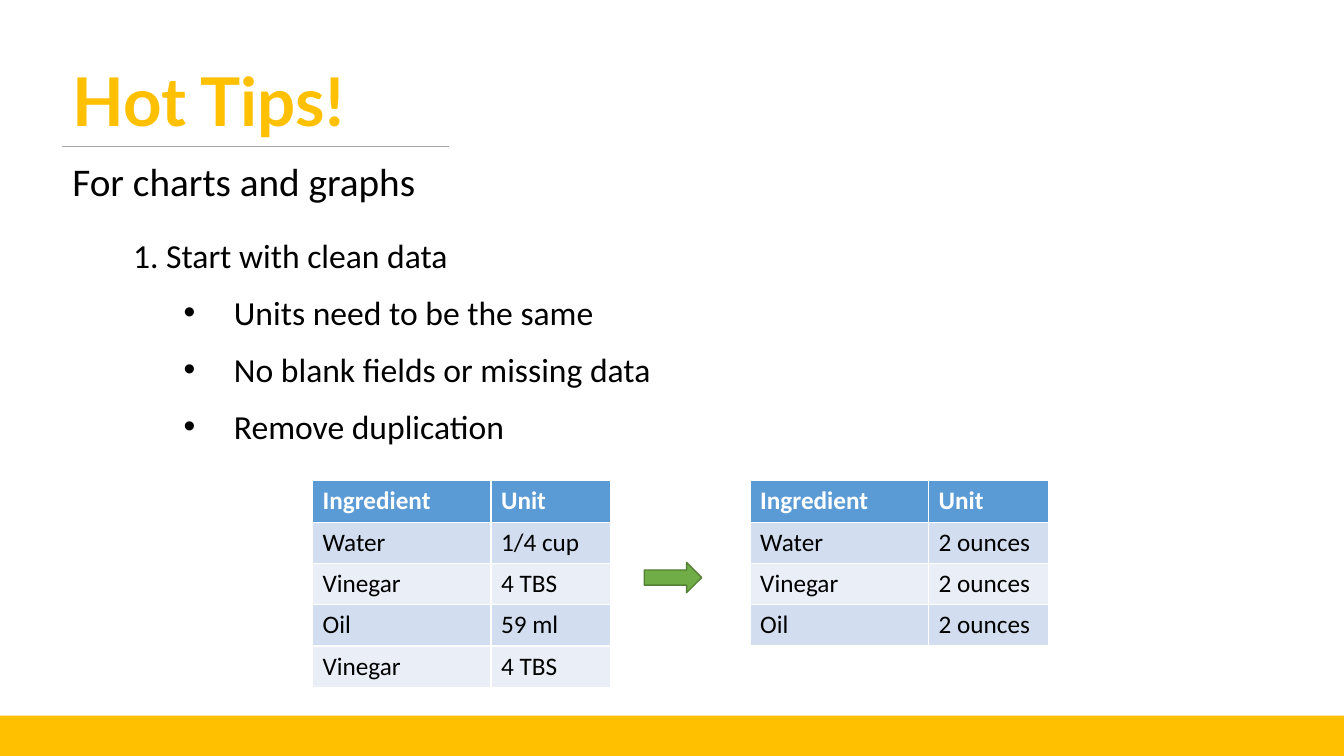
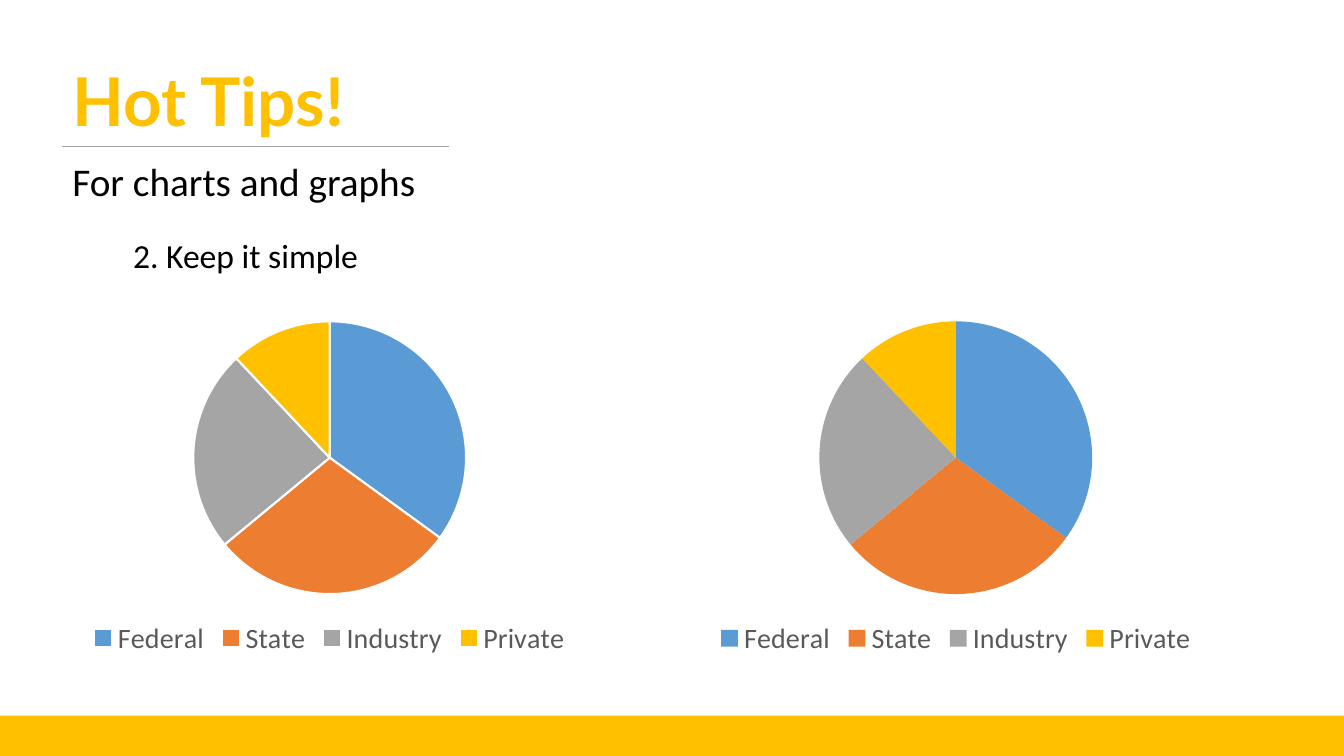
from dataclasses import dataclass

import pptx
import pptx.chart.data
import pptx.dml.color
import pptx.enum.chart
import pptx.enum.shapes
import pptx.enum.text
import pptx.oxml
import pptx.oxml.ns
import pptx.util
from lxml import etree

Inches = pptx.util.Inches
Pt = pptx.util.Pt


@dataclass(frozen=True)
class Theme:
    gold: str = "FFC000"
    black: str = "000000"
    white: str = "FFFFFF"
    rule: str = "A5A5A5"
    legend: str = "595959"
    arrow: str = "70AD47"
    arrow_line: str = "538035"
    table_header: str = "5B9BD5"
    table_bands: tuple = ("D2DEEF", "EAEFF7")
    slices: tuple = ("5B9BD5", "ED7D31", "A5A5A5", "FFC000")
    title_font: str = "Lato"
    body_font: str = "Calibri"
    title_size: int = 48
    subtitle_size: int = 28
    list_size: int = 24
    legend_size: int = 20
    table_size: int = 18


THEME = Theme()
WIDTH, HEIGHT = 13.33, 7.5
BAND_HEIGHT = 0.4
MARGIN = 0.62
RULE_TOP, RULE_WIDTH = 1.45, 3.83
LIST_LEFT, LIST_TOP = 1.22, 2.28
ROW_HEIGHT = 0.41
COLUMN_WIDTHS = (1.77, 1.19)
TABLE_TOP = 4.77
CHART_TOP, CHART_HEIGHT = 3.05, 3.51

TITLE = "Hot Tips!"
SUBTITLE = "For charts and graphs"

CLEAN_TIP = "1. Start with clean data"
CLEAN_POINTS = [
    "Units need to be the same",
    "No blank fields or missing data",
    "Remove duplication",
]
TABLE_HEADER = ("Ingredient", "Unit")
RAW_ROWS = [("Water", "1/4 cup"), ("Vinegar", "4 TBS"), ("Oil", "59 ml"), ("Vinegar", "4 TBS")]
CLEAN_ROWS = [(name, "2 ounces") for name in ("Water", "Vinegar", "Oil")]
TABLES = [(3.1, RAW_ROWS), (7.44, CLEAN_ROWS)]

SIMPLE_TIP = "2. Keep it simple"
FUNDING = {"Federal": 35, "State": 29, "Industry": 24, "Private": 12}
# left, width, whether white lines part the slices
PIES = [(0.3, 5.94, True), (6.25, 6.46, False)]


def color(value):
    return pptx.dml.color.RGBColor.from_string(value)


def paint(fill, value):
    fill.solid()
    fill.fore_color.rgb = color(value)


def style_font(font, size, value, name=THEME.body_font, bold=False):
    font.size = Pt(size)
    font.name = name
    font.bold = bold
    font.color.rgb = color(value)


def place(shape, left, top, width, height):
    shape.left, shape.top = Inches(left), Inches(top)
    shape.width, shape.height = Inches(width), Inches(height)


def prepare_frame(text_frame):
    text_frame.word_wrap = True
    text_frame.auto_size = pptx.enum.text.MSO_AUTO_SIZE.NONE
    text_frame.vertical_anchor = pptx.enum.text.MSO_ANCHOR.TOP


def set_bullet(paragraph, bulleted):
    """Give the paragraph a hanging bullet, or remove the inherited one."""
    properties = paragraph._p.get_or_add_pPr()
    properties.set("marL", str(Inches(1) if bulleted else 0))
    properties.set("indent", str(Inches(-0.5) if bulleted else 0))
    qualified = pptx.oxml.ns.qn
    if bulleted:
        etree.SubElement(properties, qualified("a:buFont")).set("typeface", "Arial")
        etree.SubElement(properties, qualified("a:buChar")).set("char", "•")
    else:
        etree.SubElement(properties, qualified("a:buNone"))


def add_shape(slide, kind, left, top, width, height, fill, line=None):
    shape = slide.shapes.add_shape(
        kind, Inches(left), Inches(top), Inches(width), Inches(height))
    shape.shadow.inherit = False
    paint(shape.fill, fill)
    if line:
        shape.line.color.rgb = color(line)
        shape.line.width = Pt(1)
    else:
        shape.line.fill.background()


def add_title(slide):
    title = slide.shapes.title
    place(title, MARGIN, 0.54, 4.49, 0.91)
    title.text_frame.text = TITLE
    prepare_frame(title.text_frame)
    paragraph = title.text_frame.paragraphs[0]
    paragraph.alignment = pptx.enum.text.PP_ALIGN.LEFT
    style_font(paragraph.runs[0].font, THEME.title_size, THEME.gold, THEME.title_font, True)


def add_subtitle(slide):
    box = slide.shapes.add_textbox(Inches(MARGIN), Inches(1.51), Inches(7.39), Inches(0.57))
    box.text_frame.text = SUBTITLE
    prepare_frame(box.text_frame)
    style_font(box.text_frame.paragraphs[0].runs[0].font, THEME.subtitle_size, THEME.black)


def add_rule(slide):
    rule = slide.shapes.add_connector(
        pptx.enum.shapes.MSO_CONNECTOR.STRAIGHT, Inches(MARGIN), Inches(RULE_TOP),
        Inches(MARGIN + RULE_WIDTH), Inches(RULE_TOP))
    rule.line.color.rgb = color(THEME.rule)
    rule.line.width = Pt(0.5)
    etree.SubElement(rule._element.spPr, pptx.oxml.ns.qn("a:effectLst"))


def fill_list(slide, tip, points, width, height):
    body = slide.placeholders[1]
    place(body, LIST_LEFT, LIST_TOP, width, height)
    body.text_frame.text = "\n".join([tip, *points])
    prepare_frame(body.text_frame)
    for index, paragraph in enumerate(body.text_frame.paragraphs):
        paragraph.level = min(index, 1)
        paragraph.space_before = Pt(0)
        paragraph.space_after = Pt(12)
        set_bullet(paragraph, index > 0)
        style_font(paragraph.runs[0].font, THEME.list_size, THEME.black)


def add_tip_slide(presentation, tip, points, width, height):
    """Add a slide with the shared title, rule and band, and its own tip."""
    slide = presentation.slides.add_slide(presentation.slide_layouts[1])
    add_title(slide)
    add_shape(slide, pptx.enum.shapes.MSO_SHAPE.RECTANGLE,
              0, HEIGHT - BAND_HEIGHT, WIDTH, BAND_HEIGHT, THEME.gold)
    add_subtitle(slide)
    fill_list(slide, tip, points, width, height)
    add_rule(slide)
    return slide


def add_ingredient_table(slide, left, rows):
    content = [TABLE_HEADER, *rows]
    table = slide.shapes.add_table(
        len(content), len(COLUMN_WIDTHS), Inches(left), Inches(TABLE_TOP),
        Inches(sum(COLUMN_WIDTHS)), Inches(ROW_HEIGHT * len(content))).table
    for column, width in zip(table.columns, COLUMN_WIDTHS):
        column.width = Inches(width)
    for row_index, values in enumerate(content):
        header = row_index == 0
        fill = THEME.table_header if header else THEME.table_bands[(row_index - 1) % 2]
        for column_index, value in enumerate(values):
            cell = table.cell(row_index, column_index)
            cell.text_frame.text = value
            paint(cell.fill, fill)
            style_font(cell.text_frame.paragraphs[0].runs[0].font, THEME.table_size,
                       THEME.white if header else THEME.black, bold=header)


def add_pie(slide, left, width, parted):
    data = pptx.chart.data.CategoryChartData()
    data.categories = list(FUNDING)
    data.add_series("Series 1", list(FUNDING.values()))
    chart = slide.shapes.add_chart(
        pptx.enum.chart.XL_CHART_TYPE.PIE, Inches(left), Inches(CHART_TOP),
        Inches(width), Inches(CHART_HEIGHT), data).chart
    style_font(chart.font, 10, THEME.black)
    chart.has_title = False
    chart.has_legend = True
    chart.legend.position = pptx.enum.chart.XL_LEGEND_POSITION.BOTTOM
    chart.legend.include_in_layout = False
    style_font(chart.legend.font, THEME.legend_size, THEME.legend)
    plot = chart.plots[0]
    plot.vary_by_categories = True
    for index, value in enumerate(THEME.slices):
        slice_format = plot.series[0].points[index].format
        paint(slice_format.fill, value)
        if parted:
            slice_format.line.color.rgb = color(THEME.white)
            slice_format.line.width = Pt(1.5)
        else:
            slice_format.line.fill.background()


def main():
    presentation = pptx.Presentation()
    presentation.slide_width, presentation.slide_height = Inches(WIDTH), Inches(HEIGHT)

    clean_slide = add_tip_slide(presentation, CLEAN_TIP, CLEAN_POINTS, 5.83, 2.22)
    for left, rows in TABLES:
        add_ingredient_table(clean_slide, left, rows)
    add_shape(clean_slide, pptx.enum.shapes.MSO_SHAPE.RIGHT_ARROW,
              6.39, 5.58, 0.57, 0.3, THEME.arrow, THEME.arrow_line)

    simple_slide = add_tip_slide(presentation, SIMPLE_TIP, [], 7.52, 0.5)
    for left, width, parted in PIES:
        add_pie(simple_slide, left, width, parted)

    presentation.save("out.pptx")


if __name__ == "__main__":
    main()
